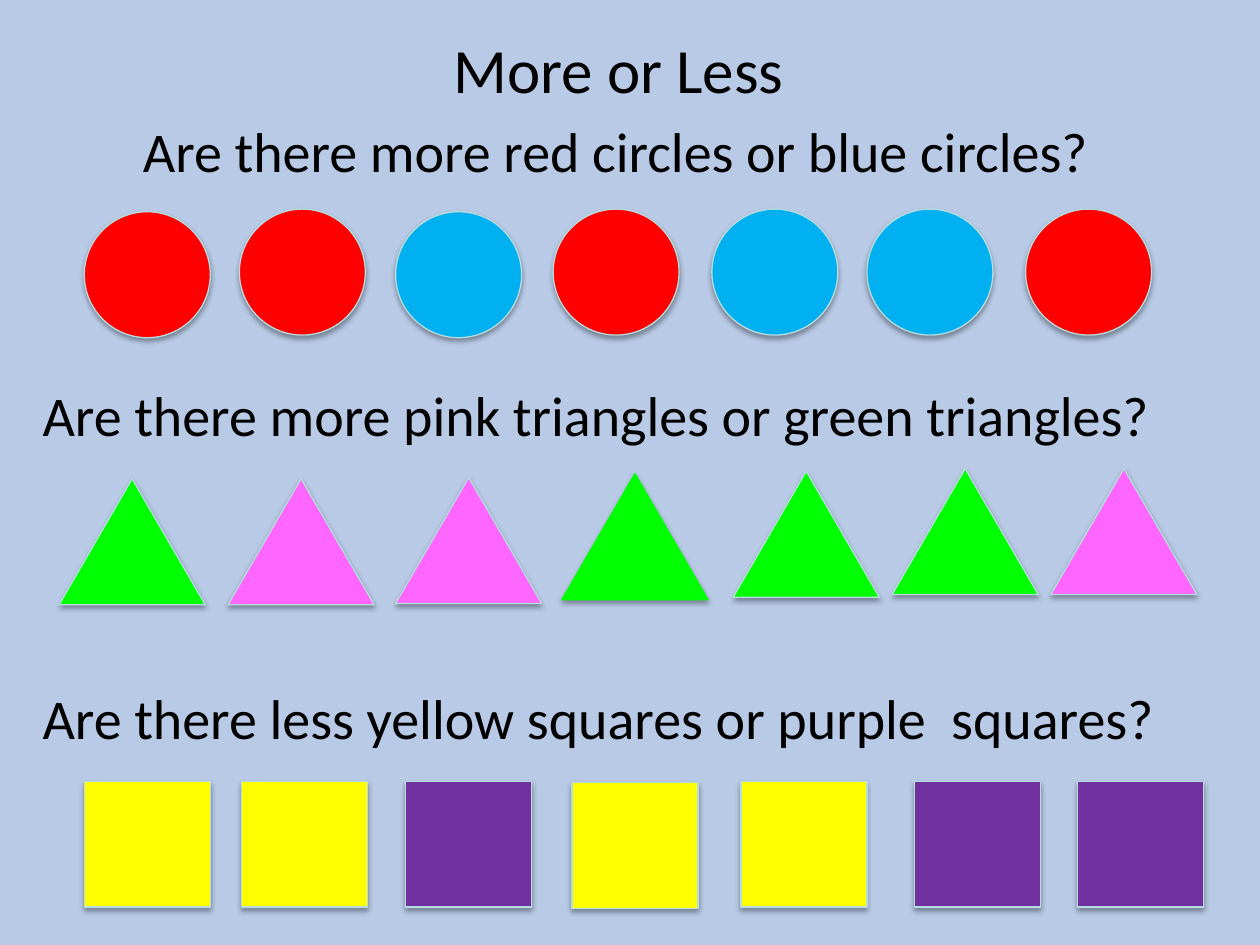
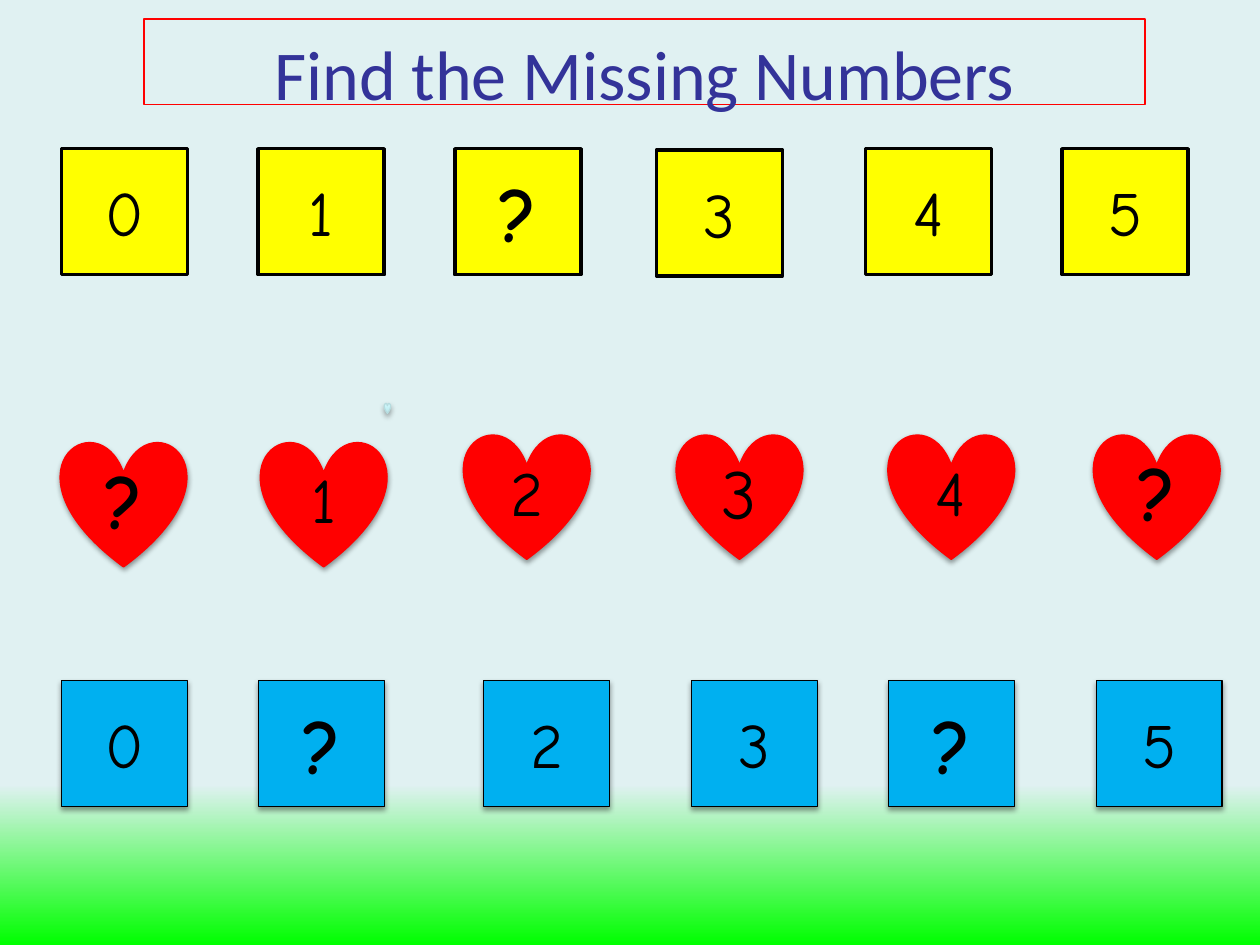
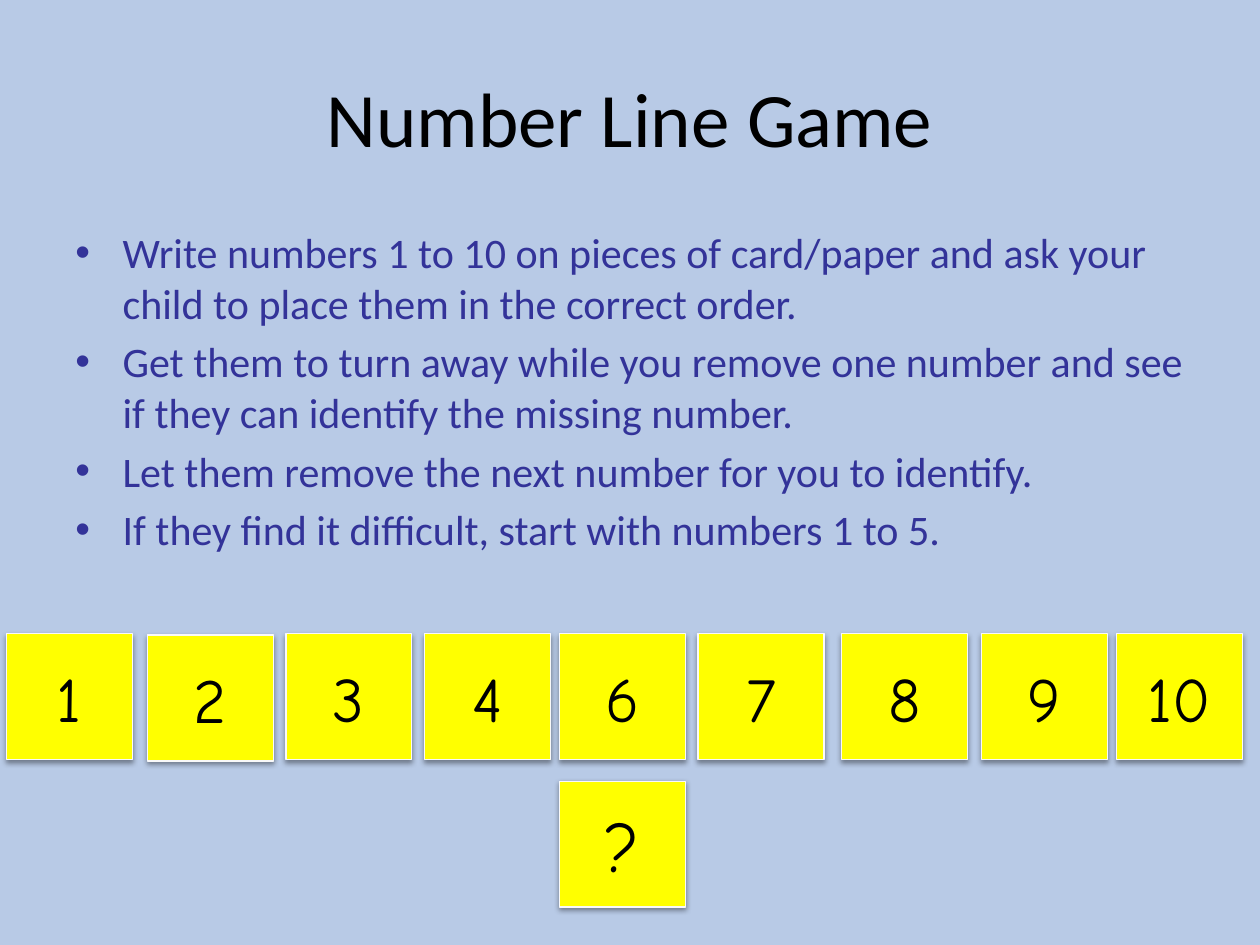
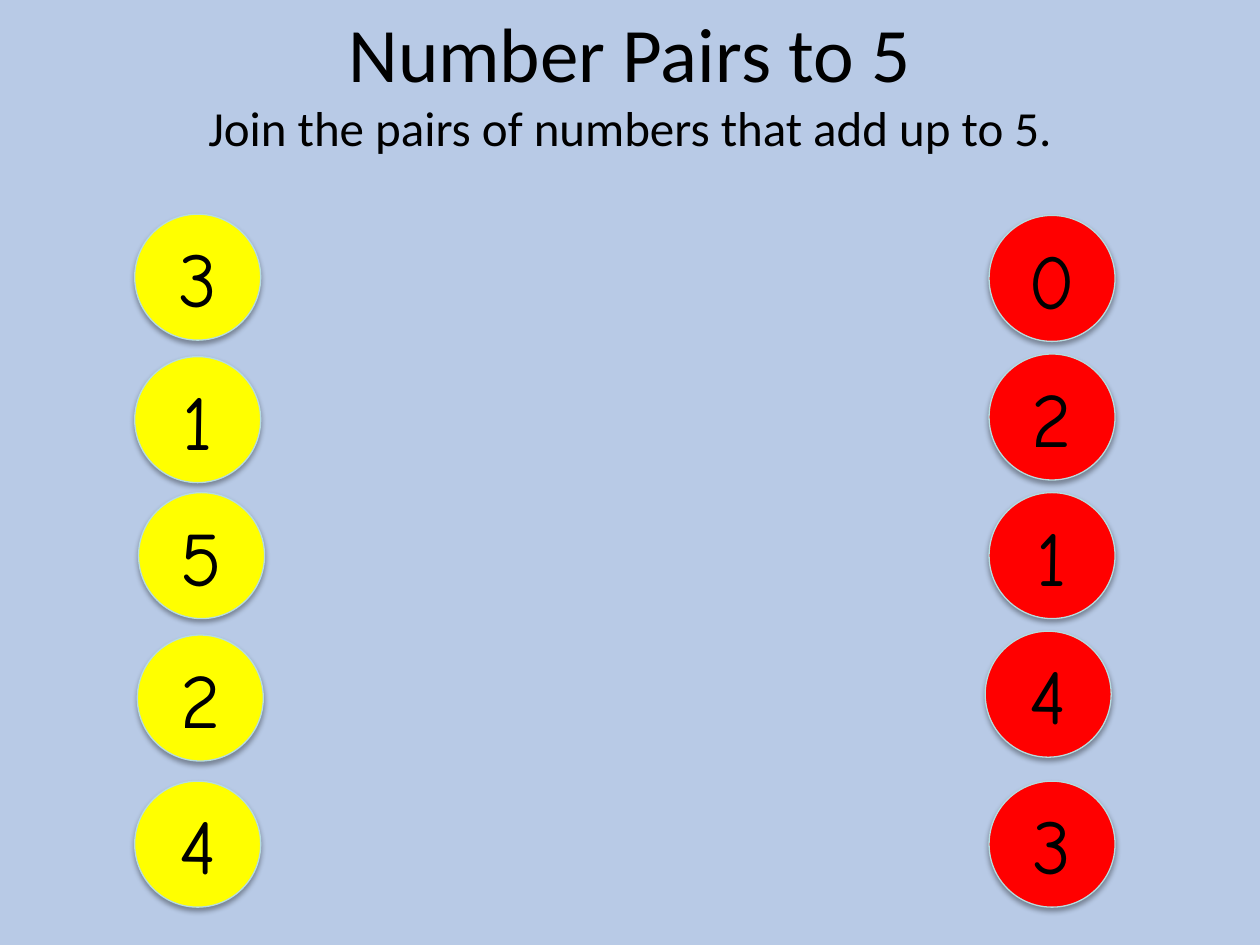
"""Build four early-maths slides: comparing, missing numbers, a number line and pairs to five."""
from itertools import repeat

from lxml import etree
from pptx import Presentation
from pptx.dml.color import RGBColor
from pptx.enum import shapes, text
from pptx.oxml.ns import qn
from pptx.util import Pt

COLOURS = {
    "sky": "B8CAE6", "mist": "E0F1F2", "black": "000000", "navy": "333399",
    "red": "FF0000", "blue": "00B0F0", "green": "00FF00", "pink": "FF66FF",
    "yellow": "FFFF00", "purple": "7030A0", "aqua": "B6DCDF", "white": "F9F9F9",
    "bead_dark": "B5E5E9", "bead_light": "D3FBFF",
}
TEXT_FONT, NUMBER_FONT = "Calibri", "Comic Neue"
CARD = 72
SOFT, FIRM = (35, 1.8), (38, 1.6)
SHADOW_BLUR = 3.1
BULLET_INDENT = 27
OVAL, TRIANGLE, SQUARE, HEART = (
    shapes.MSO_SHAPE.OVAL, shapes.MSO_SHAPE.ISOSCELES_TRIANGLE,
    shapes.MSO_SHAPE.RECTANGLE, shapes.MSO_SHAPE.HEART)
LEFT, CENTER = text.PP_ALIGN.LEFT, text.PP_ALIGN.CENTER
TOP, MIDDLE = text.MSO_ANCHOR.TOP, text.MSO_ANCHOR.MIDDLE

COMPARISONS = [
    ("Are there more red circles or blue circles?", (28, 60.5, 648, 51), CENTER, OVAL, CARD,
     [48.2, 136.8, 226.1, 316.1, 406.8, 495.4, 586.1],
     [121, 119.5, 121, 119.5, 119.5, 119.5, 119.5],
     ["red", "red", "blue", "red", "blue", "blue", "red"]),
    ("Are there more pink triangles or green triangles?", (17.3, 213.8, 700.6, 46), LEFT, TRIANGLE, 83.5,
     [33.8, 130.3, 226.1, 321.1, 419, 509.8, 600.5],
     [273.6, 273.6, 272.9, 270.7, 269.3, 267.8, 267.8],
     ["green", "pink", "pink", "green", "green", "green", "pink"]),
    ("Are there less yellow squares or purple  squares?", (17.3, 386.6, 692, 46), LEFT, SQUARE, CARD,
     [48.2, 138.2, 231.8, 326.9, 423.4, 522.7, 615.6],
     [446.4, 446.4, 446.4, 447.1, 446.4, 446.4, 446.4],
     ["yellow", "yellow", "purple", "yellow", "yellow", "purple", "purple"]),
]
MISSING_NUMBERS = [
    (SQUARE, "yellow", "black", 2, None, "01?345",
     [35.3, 147.6, 259.9, 375.1, 494.6, 607], [85, 85, 85, 85.7, 85, 85]),
    (HEART, "red", "red", 0.75, FIRM, "?1234?",
     [34.6, 149, 265, 386.6, 507.6, 625], [252, 252, 247.7, 247.7, 247.7, 247.7]),
    (SQUARE, "blue", "black", 0.75, FIRM, "0?23?5",
     [35.3, 147.6, 276.5, 395.3, 507.6, 626.4], repeat(388.8)),
]
INSTRUCTIONS = [
    "Write numbers 1 to 10 on pieces of card/paper and ask your child to place them in the correct order.",
    "Get them to turn away while you remove one number and see if they can identify the missing number.",
    "Let them remove the next number for you to identify.",
    "If they find it difficult, start with numbers 1 to 5.",
]
NUMBER_LINE = [
    ("1", 3.6, 362.2), ("2", 84.2, 362.9), ("3", 163.4, 362.2), ("4", 242.6, 362.2),
    ("6", 319.7, 362.2), ("7", 398.9, 362.2), ("8", 481, 362.2), ("9", 560.9, 362.2),
    ("10", 637.9, 362.2), ("?", 319.7, 446.4),
]
PAIRS = [
    ("yellow", "31524", [77, 77, 79.2, 78.5, 77], [122.4, 203.8, 281.5, 362.9, 446.4]),
    ("red", "02143", [565.2, 565.2, 565.2, 563, 565.2], [123.1, 202.3, 281.5, 360.7, 446.4]),
]


def rgb(name):
    return RGBColor.from_string(COLOURS[name])


def add_slide(deck, background="sky"):
    slide = deck.slides.add_slide(deck.slide_layouts[6])
    slide.background.fill.solid()
    slide.background.fill.fore_color.rgb = rgb(background)
    return slide


def write(frame, lines, sizes, font=TEXT_FONT, colour="black", align=CENTER, bold=False):
    frame.text = "\n".join(lines)
    for paragraph, size in zip(frame.paragraphs, sizes):
        paragraph.alignment = align
        style = paragraph.runs[0].font
        style.name, style.size, style.bold = font, Pt(size), bold
        style.color.rgb = rgb(colour)


def add_words(slide, box, lines, sizes, anchor=MIDDLE, wrap=True, **style):
    words = slide.shapes.add_textbox(*map(Pt, box))
    words.text_frame.word_wrap = wrap
    words.text_frame.vertical_anchor = anchor
    write(words.text_frame, lines, sizes, **style)
    return words


def add_piece(slide, kind, box, fill, line="aqua", weight=0.75, shadow=SOFT):
    piece = slide.shapes.add_shape(kind, *map(Pt, box))
    piece.fill.solid()
    piece.fill.fore_color.rgb = rgb(fill)
    piece.line.color.rgb = rgb(line)
    piece.line.width = Pt(weight)
    piece.shadow.inherit = False
    if shadow:
        opacity, distance = shadow
        effects = piece.element.spPr.find(qn("a:effectLst"))
        drop = etree.SubElement(effects, qn("a:outerShdw"), blurRad=str(Pt(SHADOW_BLUR)),
                                dist=str(Pt(distance)), dir="5400000", rotWithShape="0")
        tint = etree.SubElement(drop, qn("a:srgbClr"), val=COLOURS["black"])
        etree.SubElement(tint, qn("a:alpha"), val=str(opacity * 1000))
    return piece


def add_card(slide, kind, left, top, label, size, fill, bold=False, **outline):
    card = add_piece(slide, kind, (left, top, CARD, CARD), fill, **outline)
    card.text_frame.vertical_anchor = MIDDLE
    write(card.text_frame, [label], [size], font=NUMBER_FONT, bold=bold)


def set_gradient(owner, fill, stops, clockwise):
    fill.gradient()
    fill.gradient_angle = 360 - clockwise
    stop_list = next(owner.element.iter(qn("a:gsLst")))
    for old_stop in list(stop_list):
        stop_list.remove(old_stop)
    for position, colour in stops:
        stop = etree.SubElement(stop_list, qn("a:gs"), pos=str(position * 1000))
        etree.SubElement(stop, qn("a:srgbClr"), val=COLOURS[colour])


def add_bullet(paragraph):
    properties = paragraph._p.get_or_add_pPr()
    properties.set("marL", str(Pt(BULLET_INDENT)))
    properties.set("indent", str(-Pt(BULLET_INDENT)))
    etree.SubElement(properties, qn("a:buFont"), typeface="Arial")
    etree.SubElement(properties, qn("a:buChar"), char="•")


def more_or_less(deck):
    slide = add_slide(deck)
    for question, box, align, kind, width, lefts, tops, fills in COMPARISONS:
        add_words(slide, box, [question], [32], align=align)
        for left, top, fill in zip(lefts, tops, fills):
            bright_edge = kind == TRIANGLE and left == lefts[3]
            add_piece(slide, kind, (left, top, width, CARD), fill, "green" if bright_edge else "aqua")
    add_words(slide, (252, 13.7, 217.4, 51), ["More or Less"], [36], TOP, wrap=False, align=LEFT)


def missing_numbers(deck):
    slide = add_slide(deck)
    set_gradient(slide, slide.background.fill,
                 [(0, "mist"), (74, "mist"), (83, "mist"), (100, "green")], 90)
    heading = add_words(slide, (82.1, 10.8, 572.4, 49), ["Find the Missing Numbers"], [40], TOP, colour="navy")
    heading.text_frame.margin_top = Pt(6.6)
    heading.line.color.rgb = rgb("red")
    heading.line.width = Pt(1)
    bead = add_piece(slide, HEART, (219.6, 230.4, 3.6, 5.8), "bead_dark")
    set_gradient(bead, bead.fill, [(0, "bead_dark"), (100, "bead_light")], 270)
    for kind, fill, line, weight, shadow, labels, lefts, tops in MISSING_NUMBERS:
        for label, left, top in zip(labels, lefts, tops):
            unknown = label == "?"
            size = 44 if unknown else 40 if (kind, label) == (HEART, "3") else 36
            add_card(slide, kind, left, top, label, size, fill, unknown,
                     line=line, weight=weight, shadow=shadow)


def number_line(deck):
    slide = add_slide(deck)
    add_words(slide, (36, 21.6, 648, 90), ["Number Line Game"], [44])
    steps = add_words(slide, (36, 126, 648, 404.6), INSTRUCTIONS, repeat(24), TOP,
                      colour="navy", align=LEFT)
    for paragraph in steps.text_frame.paragraphs:
        paragraph.space_before = Pt(4.8)
        add_bullet(paragraph)
    for label, left, top in NUMBER_LINE:
        add_card(slide, SQUARE, left, top, label, 40 if label == "?" else 36, "yellow",
                 line="white", shadow=FIRM)


def number_pairs(deck):
    slide = add_slide(deck)
    heading = add_words(slide, (36, 10.8, 648, 96.5),
                        ["Number Pairs to 5", "Join the pairs of numbers that add up to 5."], [44, 28])
    heading.text_frame.margin_bottom = Pt(29)
    for fill, labels, lefts, tops in PAIRS:
        for label, left, top in zip(labels, lefts, tops):
            add_card(slide, OVAL, left, top, label, 44, fill)


def main():
    deck = Presentation()
    deck.slide_width, deck.slide_height = Pt(720), Pt(540)
    for build in (more_or_less, missing_numbers, number_line, number_pairs):
        build(deck)
    deck.save("out.pptx")


if __name__ == "__main__":
    main()
